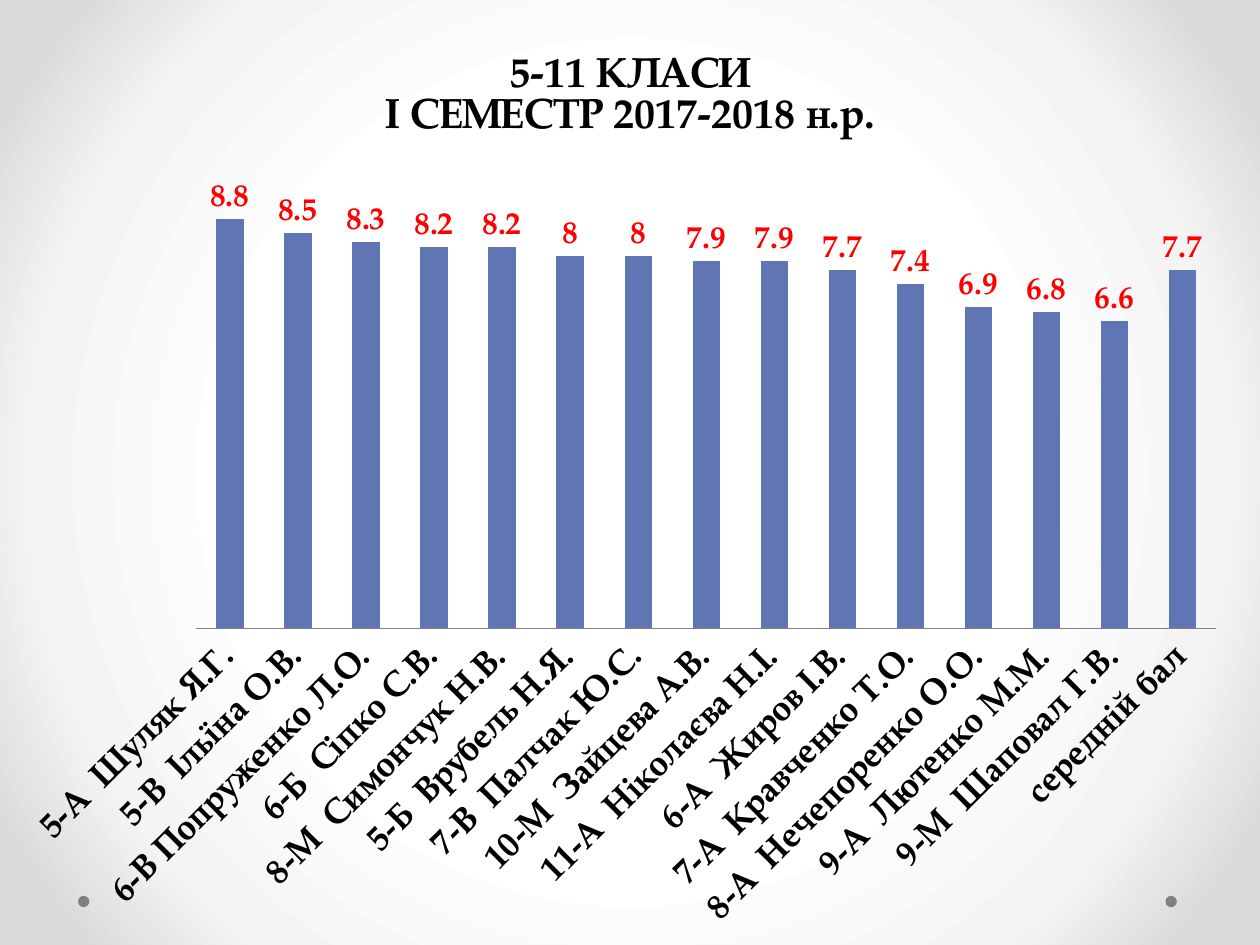
from dataclasses import dataclass

from lxml import etree
from pptx import Presentation
from pptx.chart.data import CategoryChartData
from pptx.dml.color import RGBColor
from pptx.enum.chart import XL_CHART_TYPE, XL_LABEL_POSITION, XL_TICK_LABEL_POSITION, XL_TICK_MARK
from pptx.enum.shapes import MSO_SHAPE
from pptx.oxml import parse_xml
from pptx.oxml.ns import nsdecls, qn
from pptx.util import Pt

COLUMN = XL_CHART_TYPE.COLUMN_CLUSTERED
OUTSIDE_END = XL_LABEL_POSITION.OUTSIDE_END
LOW = XL_TICK_LABEL_POSITION.LOW
NO_TICK = XL_TICK_MARK.NONE
OVAL = MSO_SHAPE.OVAL


@dataclass(frozen=True)
class Theme:
    font: str = "TeX Gyre Pagella"
    text: RGBColor = RGBColor(0, 0, 0)
    bar: RGBColor = RGBColor(0x60, 0x76, 0xB4)
    value: RGBColor = RGBColor(0xFF, 0, 0)
    dot: RGBColor = RGBColor(0x80, 0x80, 0x80)
    title_size: int = 24
    category_size: int = 20
    value_size: int = 18
    background: tuple = ((50, "FFFFFF"), (76, "F4F4F4"), (92, "DADADA"))


@dataclass(frozen=True)
class Box:
    left: float
    top: float
    width: float
    height: float

    def lengths(self) -> tuple:
        return Pt(self.left), Pt(self.top), Pt(self.width), Pt(self.height)


@dataclass(frozen=True)
class ClassScore:
    name: str
    score: float


THEME = Theme()
CHART_BOX = Box(8.64, 15.12, 702.72, 521.28)
DOTS = [Box(left, 511.9, 6.5, 6.5) for left in (666, 44.6)]
TITLE_LINES = ("5-11 КЛАСИ", "І СЕМЕСТР 2017-2018 н.р.")
PLOT_LAYOUT = {"x": 0.147, "y": 0.15, "w": 0.83, "h": 0.51}
SCORES = [
    ClassScore("5-А  Шуляк Я.Г.", 8.8),
    ClassScore("5-В  Ільїна О.В.", 8.5),
    ClassScore("6-В Попруженко Л.О.", 8.3),
    ClassScore("6-Б  Сіпко С.В.", 8.2),
    ClassScore("8-М  Симончук Н.В.", 8.2),
    ClassScore("5-Б  Врубель Н.Я.", 8),
    ClassScore("7-В  Палчак Ю.С.", 8),
    ClassScore("10-М  Зайцева А.В.", 7.9),
    ClassScore("11-А  Ніколаєва Н.І.", 7.9),
    ClassScore("6-А  Жиров І.В.", 7.7),
    ClassScore("7-А  Кравченко Т.О.", 7.4),
    ClassScore("8-А  Нечепоренко О.О.", 6.9),
    ClassScore("9-А  Лютенко М.М.", 6.8),
    ClassScore("9-М  Шаповал Г.В.", 6.6),
    ClassScore("середній бал", 7.7),
]


def style_font(font, size: float, color: RGBColor, bold: bool = True) -> None:
    font.name = THEME.font
    font.size = Pt(size)
    font.bold = bold
    font.color.rgb = color


def paint_background(slide) -> None:
    fill = slide.background.fill
    fill.gradient()
    gradient = next(slide.element.iter(qn("a:gradFill")))
    stops = "".join(
        f'<a:gs pos="{position * 1000}"><a:srgbClr val="{color}"/></a:gs>'
        for position, color in THEME.background
    )
    radial = parse_xml(
        f'<a:gradFill {nsdecls("a")} rotWithShape="1"><a:gsLst>{stops}</a:gsLst>'
        '<a:path path="circle"><a:fillToRect l="50000" t="50000" r="50000" b="50000"/>'
        "</a:path></a:gradFill>"
    )
    gradient.getparent().replace(gradient, radial)


def add_dot(slide, box: Box) -> None:
    dot = slide.shapes.add_shape(OVAL, *box.lengths())
    dot.shadow.inherit = False
    dot.fill.solid()
    dot.fill.fore_color.rgb = THEME.dot
    dot.line.fill.background()


def add_title(chart) -> None:
    frame = chart.chart_title.text_frame
    for index, line in enumerate(TITLE_LINES):
        para = frame.add_paragraph() if index else frame.paragraphs[0]
        span = para.add_run()
        span.text = line
        style_font(span.font, THEME.title_size, THEME.text)
    chart.chart_title.include_in_layout = False


def place_plot(chart) -> None:
    plot_area = next(chart.element.iter(qn("c:plotArea")))
    for layout in plot_area.findall(qn("c:layout")):
        plot_area.remove(layout)
    layout = etree.Element(qn("c:layout"))
    manual = etree.SubElement(layout, qn("c:manualLayout"))
    settings = {"layoutTarget": "inner", "xMode": "edge", "yMode": "edge", **PLOT_LAYOUT}
    for name, value in settings.items():
        etree.SubElement(manual, qn(f"c:{name}")).set("val", str(value))
    plot_area.insert(0, layout)


def style_axes(chart) -> None:
    names = chart.category_axis
    names.major_tick_mark = NO_TICK
    names.minor_tick_mark = NO_TICK
    names.tick_label_position = LOW
    names.format.line.color.rgb = THEME.dot
    names.format.line.width = Pt(0.75)
    style_font(names.tick_labels.font, THEME.category_size, THEME.text)
    body = next(chart.element.iter(qn("c:catAx"))).find(f'{qn("c:txPr")}/{qn("a:bodyPr")}')
    body.set("rot", str(-45 * 60000))
    body.set("vert", "horz")
    values = chart.value_axis
    values.minimum_scale = 0
    values.maximum_scale = 10
    values.has_major_gridlines = False
    values.visible = False


def style_bars(plot) -> None:
    plot.gap_width = 150
    plot.vary_by_categories = False
    bars = plot.series[0]
    bars.format.fill.solid()
    bars.format.fill.fore_color.rgb = THEME.bar
    labels = bars.data_labels
    labels.show_value = True
    labels.position = OUTSIDE_END
    style_font(labels.font, THEME.value_size, THEME.value)


def add_score_chart(slide) -> None:
    data = CategoryChartData()
    data.categories = [item.name for item in SCORES]
    data.add_series("Series 1", [item.score for item in SCORES])
    chart = slide.shapes.add_chart(COLUMN, *CHART_BOX.lengths(), data).chart
    style_font(chart.font, 10, THEME.text, bold=False)
    chart.has_legend = False
    add_title(chart)
    place_plot(chart)
    style_axes(chart)
    style_bars(chart.plots[0])


def main() -> None:
    deck = Presentation()
    deck.slide_width, deck.slide_height = Pt(720), Pt(540)
    page = deck.slides.add_slide(deck.slide_layouts[6])
    paint_background(page)
    for box in DOTS:
        add_dot(page, box)
    add_score_chart(page)
    deck.save("out.pptx")


if __name__ == "__main__":
    main()
